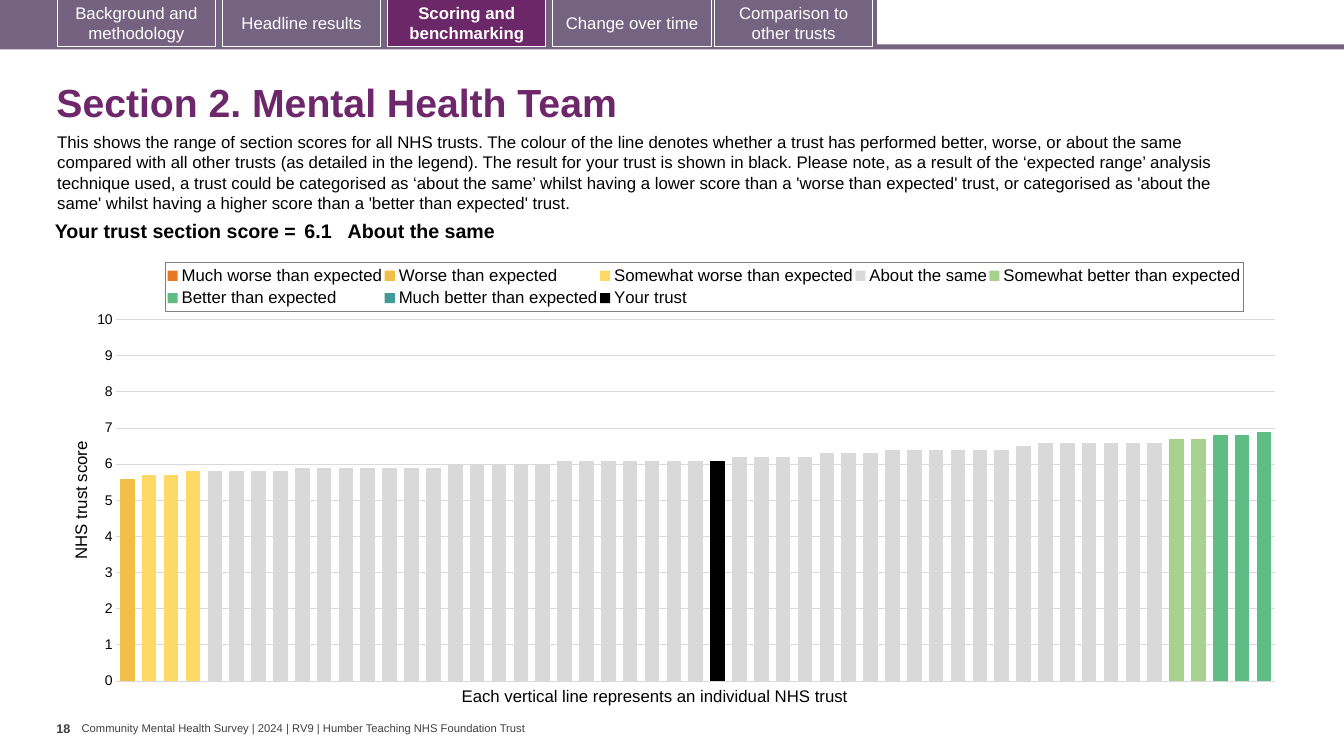
"""Build the Mental Health Team section score slide."""
from copy import deepcopy
from dataclasses import dataclass
from typing import Any, Optional

from pptx import Presentation
from pptx.chart.data import CategoryChartData
from pptx.dml.color import RGBColor
from pptx.enum.chart import XL_CHART_TYPE, XL_LEGEND_POSITION, XL_TICK_MARK
from pptx.enum.shapes import MSO_SHAPE
from pptx.enum.text import MSO_ANCHOR, MSO_AUTO_SIZE, PP_ALIGN
from pptx.oxml import parse_xml
from pptx.oxml.ns import nsdecls, qn
from pptx.util import Pt

COLUMNS = XL_CHART_TYPE.COLUMN_CLUSTERED
TOP_LEGEND = XL_LEGEND_POSITION.TOP
NO_TICK = XL_TICK_MARK.NONE
RECTANGLE = MSO_SHAPE.RECTANGLE
TOP, MIDDLE = MSO_ANCHOR.TOP, MSO_ANCHOR.MIDDLE
NO_FIT = MSO_AUTO_SIZE.NONE
LEFT, CENTER, RIGHT = PP_ALIGN.LEFT, PP_ALIGN.CENTER, PP_ALIGN.RIGHT

COLORS = {
    "mauve": "756382", "tab": "746280", "plum": "6B2768", "title": "6D276A",
    "white": "FFFFFF", "black": "000000", "footer": "404040",
    "grid": "D9D9D9", "border": "7F7F7F", "much_worse": "E87722",
    "worse": "F1BE48", "somewhat_worse": "FFD966", "same": "D9D9D9",
    "somewhat_better": "A9D18E", "better": "5FBD83", "much_better": "419999",
}
MARGINS = ("margin_left", "margin_top", "margin_right", "margin_bottom")
Box = tuple[float, float, float, float]


@dataclass
class Block:
    """A rectangle or text box with one paragraph."""
    box: Box
    text: str = ""
    size: float = 12
    color: str = "black"
    bold: bool = False
    fill: Optional[str] = None
    line: Optional[str] = None
    align: Any = LEFT
    anchor: Any = TOP
    insets: Box = (7.2, 3.6, 7.2, 3.6)
    wrap: bool = True


@dataclass
class Band:
    """A chart series covering the trusts from first up to stop."""
    name: str
    color: str
    first: int = 0
    stop: int = 0


SCORE_RUNS = ((5.6, 1), (5.7, 2), (5.8, 5), (5.9, 7), (6, 5), (6.1, 8), (6.2, 4),
              (6.3, 3), (6.4, 6), (6.5, 1), (6.6, 6), (6.7, 2), (6.8, 2), (6.9, 1))
SCORES = [score for score, count in SCORE_RUNS for _ in range(count)]
BANDS = (
    Band("Much worse than expected", "much_worse"),
    Band("Worse than expected", "worse", 0, 1),
    Band("Somewhat worse than expected", "somewhat_worse", 1, 4),
    Band("About the same", "same", 4, 48),
    Band("Somewhat better than expected", "somewhat_better", 48, 50),
    Band("Better than expected", "better", 50, 53),
    Band("Much better than expected", "much_better"),
    Band("Your trust", "black", 27, 28),
)
TABS = ((41, "Background and methodology", "tab"), (159, "Headline results", None),
        (277, "Scoring and benchmarking", "plum"), (395, "Change over time", "mauve"),
        (510.5, "Comparison to other trusts", "mauve"))
INTRO = (
    "This shows the range of section scores for all NHS trusts. The colour of the line "
    "denotes whether a trust has performed better, worse, or about the same compared with "
    "all other trusts (as detailed in the legend). The result for your trust is shown in "
    "black. Please note, as a result of the ‘expected range’ analysis technique used, a "
    "trust could be categorised as ‘about the same’ whilst having a lower score than a "
    "'worse than expected' trust, or categorised as 'about the same' whilst having a higher "
    "score than a 'better than expected' trust.")
BLOCKS = (
    Block((0, 31.7, 960, 3.6), fill="mauve"),
    Block((0, 0, 626.4, 33.8), fill="mauve"),
    *(Block((x, -0.7, 113, 33.8), text, 12, "white", fill == "plum", fill, "white",
            CENTER, MIDDLE) for x, text, fill in TABS),
    Block((58.3, 515.5, 322.6, 9.4),
          "Community Mental Health Survey | 2024 | RV9 | Humber Teaching NHS Foundation Trust",
          8, "footer", anchor=MIDDLE, insets=(0, 0, 0, 0), wrap=False),
    Block((40.3, 511.2, 18, 28.8), "18", 9, "footer", True,
          insets=(0, 3.6, 0, 3.6), wrap=False),
    Block((33.8, 90.7, 873.4, 65.5), INTRO),
    Block((322.6, 486, 295.9, 21.6),
          "Each vertical line represents an individual NHS trust", wrap=False),
)
SCORE_CELLS = ((189.4, "Your trust section score =", RIGHT, 2.9),
               (33.8, "6.1", LEFT, 2.9), (618.5, "About the same", LEFT, 0))


def rgb(name: str) -> RGBColor:
    """Return a named colour."""
    return RGBColor.from_string(COLORS[name])


def apply(obj: Any, values: dict[str, Any]) -> None:
    """Set each attribute in a dict of format values."""
    for name, value in values.items():
        setattr(obj, name, value)


def style_font(font: Any, size: float, color: str = "black", bold: bool = False,
               face: str = "Arial") -> None:
    """Format a font."""
    apply(font, {"size": Pt(size), "bold": bold, "name": face})
    font.color.rgb = rgb(color)


def add_block(s: Any, block: Block) -> None:
    """Draw a rectangle or a text box."""
    box = [Pt(v) for v in block.box]
    if block.fill or block.line:
        sp = s.shapes.add_shape(RECTANGLE, *box)
        sp.shadow.inherit = False
        for fmt, color in ((sp.fill, block.fill), (sp.line.fill, block.line)):
            if color:
                fmt.solid()
                fmt.fore_color.rgb = rgb(color)
            else:
                fmt.background()
        if block.line:
            sp.line.width = Pt(0.75)
    else:
        sp = s.shapes.add_textbox(*box)
    if not block.text:
        return
    tf = sp.text_frame
    apply(tf, {"word_wrap": block.wrap, "vertical_anchor": block.anchor})
    apply(tf, dict(zip(MARGINS, map(Pt, block.insets))))
    p = tf.paragraphs[0]
    p.alignment = block.align
    r = p.add_run()
    r.text = block.text
    style_font(r.font, block.size, block.color, block.bold)


def add_title(s: Any, text: str) -> None:
    """Place and format the title."""
    sp = s.shapes.title
    apply(sp, dict(zip(("left", "top", "width", "height"), map(Pt, (33.1, 49, 899.3, 51.8)))))
    tf = sp.text_frame
    tf.text = text
    apply(tf, {"auto_size": NO_FIT, "vertical_anchor": MIDDLE, "word_wrap": True})
    p = tf.paragraphs[0]
    apply(p, {"alignment": LEFT, "line_spacing": 0.9})
    style_font(p.runs[0].font, 28, "title", True)


def add_score(s: Any) -> None:
    """Add the one-row table with the trust's score."""
    width = sum(cell[0] for cell in SCORE_CELLS)
    table = s.shapes.add_table(1, 3, Pt(25.2), Pt(154.8), Pt(width), Pt(22.3)).table
    apply(table, {"first_row": False, "horz_banding": False})
    for i, (width, text, align, inset) in enumerate(SCORE_CELLS):
        table.columns[i].width = Pt(width)
        cell = table.cell(0, i)
        cell.fill.background()
        apply(cell, dict(zip(MARGINS, map(Pt, (inset, 2.9, inset, 2.9)))))
        cell.text = text
        p = cell.text_frame.paragraphs[0]
        p.alignment = align
        style_font(p.runs[0].font, 14, bold=True)


def set_layout(parent: Any, index: int, box: Box, inner: str = "") -> None:
    """Give a chart part a fixed place as fractions of the chart."""
    for old in parent.findall(qn("c:layout")):
        parent.remove(old)
    values = "".join(f'<c:{k} val="{v}"/>' for k, v in zip("xywh", box))
    parent.insert(index, parse_xml(
        f'<c:layout {nsdecls("c")}><c:manualLayout>{inner}<c:xMode val="edge"/>'
        f'<c:yMode val="edge"/>{values}</c:manualLayout></c:layout>'))


def add_second_axis(plot_area: Any) -> None:
    """Move the last series to a hidden-label axis on the right."""
    bars = plot_area.find(qn("c:barChart"))
    axes = [plot_area.find(qn(tag)) for tag in ("c:catAx", "c:valAx")]
    right_bars = deepcopy(bars)
    series = bars.findall(qn("c:ser"))
    bars.remove(series[-1])
    for ser in right_bars.findall(qn("c:ser"))[:-1]:
        right_bars.remove(ser)
    bars.addnext(right_bars)
    copies = [deepcopy(ax) for ax in axes]
    ids = {ax.find(qn("c:axId")).get("val"): str(i) for i, ax in enumerate(axes, 5001)}
    for part in (right_bars, *copies):
        for ref in [*part.findall(qn("c:axId")), *part.findall(qn("c:crossAx"))]:
            ref.set("val", ids[ref.get("val")])
    value_axis = copies[1]
    for tag in ("c:majorGridlines", "c:title"):
        value_axis.remove(value_axis.find(qn(tag)))
    for tag, value in (("c:axPos", "r"), ("c:tickLblPos", "none"), ("c:crosses", "max")):
        value_axis.find(qn(tag)).set("val", value)
    axes[1].addnext(value_axis)
    value_axis.addnext(copies[0])


def add_scores_chart(s: Any) -> None:
    """Add the chart of all trusts' scores."""
    data = CategoryChartData()
    data.categories = [str(i + 1) for i in range(len(SCORES))]
    for band in BANDS:
        data.add_series(band.name, [v if band.first <= i < band.stop else None
                                    for i, v in enumerate(SCORES)])
    chart = s.shapes.add_chart(COLUMNS, Pt(48.2), Pt(177.8), Pt(874.8), Pt(319.7), data).chart
    apply(chart, {"has_title": False, "has_legend": True})
    style_font(chart.font, 10, face="Calibri")
    plot = chart.plots[0]
    apply(plot, {"gap_width": 50, "overlap": 100, "vary_by_categories": False})
    for ser, band in zip(plot.series, BANDS):
        ser.format.fill.solid()
        ser.format.fill.fore_color.rgb = rgb(band.color)
    chart.category_axis.visible = False
    axis = chart.value_axis
    apply(axis, {"minimum_scale": 0, "maximum_scale": 10, "major_unit": 1,
                 "major_tick_mark": NO_TICK, "has_major_gridlines": True})
    axis.format.line.fill.background()
    grid = axis.major_gridlines.format.line
    grid.width = Pt(0.75)
    grid.color.rgb = rgb("grid")
    style_font(axis.tick_labels.font, 10)
    apply(axis.tick_labels, {"number_format": "0", "number_format_is_linked": False})
    p = axis.axis_title.text_frame.paragraphs[0]
    r = p.add_run()
    r.text = "NHS trust score"
    style_font(r.font, 12)
    legend = chart.legend
    apply(legend, {"position": TOP_LEGEND, "include_in_layout": False})
    style_font(legend.font, 12)
    part = legend._element
    set_layout(part, 1, (0.08, 0.03, 0.88, 0.11))
    part.find(qn("c:overlay")).addnext(parse_xml(
        f'<c:spPr {nsdecls("c", "a")}><a:ln w="9525"><a:solidFill>'
        f'<a:srgbClr val="{COLORS["border"]}"/></a:solidFill></a:ln></c:spPr>'))
    plot_area = chart._chartSpace.chart.plotArea
    set_layout(plot_area, 0, (0.04, 0.158, 0.946, 0.808), '<c:layoutTarget val="inner"/>')
    add_second_axis(plot_area)


def main() -> None:
    """Build and save the slide."""
    prs = Presentation()
    apply(prs, {"slide_width": Pt(960), "slide_height": Pt(540)})
    s = prs.slides.add_slide(prs.slide_layouts[5])
    add_title(s, "Section 2. Mental Health Team")
    for block in BLOCKS:
        add_block(s, block)
    add_scores_chart(s)
    add_score(s)
    prs.save("out.pptx")


if __name__ == "__main__":
    main()
